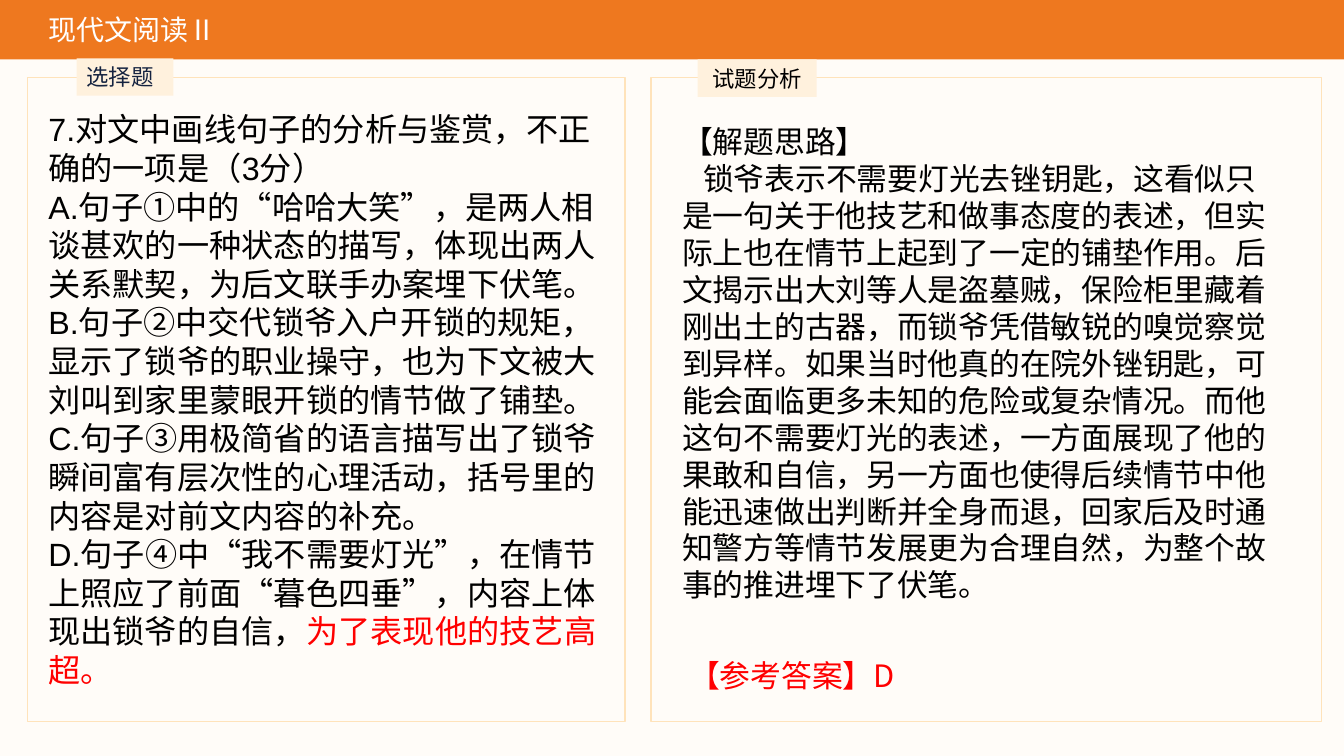
import pptx
import pptx.dml.color
import pptx.enum.shapes
import pptx.enum.text
import pptx.oxml
import pptx.oxml.ns
import pptx.util
from dataclasses import dataclass

Cm = pptx.util.Cm
ALIGN = pptx.enum.text.PP_ALIGN
ANCHOR = pptx.enum.text.MSO_ANCHOR


@dataclass(frozen=True)
class Theme:
    paper: str = "FFFCF8"
    bar: str = "EE781F"
    tag: str = "FFF1DD"
    frame: str = "FFE3BB"
    navy: str = "152340"
    ink: str = "000000"
    white: str = "FFFFFF"
    answer: str = "FF0000"
    latin: str = "Arial"
    chinese: str = "Noto Sans CJK SC"
    tag_size: int = 16
    title_size: int = 20
    analysis_size: int = 22
    question_size: int = 23


class ReadingSlide:
    """Draws the bar, frames, tags and texts of one exam-review slide."""

    def __init__(self, deck, theme):
        self.theme = theme
        self.page = deck.slides.add_slide(deck.slide_layouts[6])
        self.paint(self.page.background.fill, theme.paper)

    def paint(self, fill, color):
        fill.solid()
        fill.fore_color.rgb = pptx.dml.color.RGBColor.from_string(color)

    def rectangle(self, place, fill=None, line=None):
        kind = pptx.enum.shapes.MSO_SHAPE.RECTANGLE
        box = self.page.shapes.add_shape(kind, *map(Cm, place))
        box.shadow.inherit = False
        if fill:
            self.paint(box.fill, fill)
        else:
            box.fill.background()
        if line:
            self.paint(box.line.fill, line)
            box.line.width = pptx.util.Pt(1)
        else:
            box.line.fill.background()
        return box

    def fill_text(self, box, paragraphs, size, anchor=ANCHOR.TOP, align=ALIGN.LEFT, indents=()):
        frame = box.text_frame
        layout = {
            "word_wrap": True,
            "auto_size": pptx.enum.text.MSO_AUTO_SIZE.NONE,
            "vertical_anchor": anchor,
        }
        for name, value in layout.items():
            setattr(frame, name, value)
        for index, spans in enumerate(paragraphs):
            para = frame.paragraphs[0] if index == 0 else frame.add_paragraph()
            para.alignment = align
            if index < len(indents):
                para._p.get_or_add_pPr().set("indent", str(Cm(indents[index])))
            for words, font, color in spans:
                self.span(para, words, size, font, color)

    def span(self, para, words, size, font, color):
        span = para.add_run()
        span.text = words
        for name, value in {"size": pptx.util.Pt(size), "name": font}.items():
            setattr(span.font, name, value)
        span.font.color.rgb = pptx.dml.color.RGBColor.from_string(color)
        east = pptx.oxml.parse_xml(
            f'<a:ea {pptx.oxml.ns.nsdecls("a")} typeface="{self.theme.chinese}"/>'
        )
        span.font._element.find(pptx.oxml.ns.qn("a:latin")).addnext(east)

    def tag(self, place, words, font, color, align):
        box = self.rectangle(place, fill=self.theme.tag)
        self.fill_text(box, [[(words, font, color)]], self.theme.tag_size, ANCHOR.MIDDLE, align)

    def text(self, place, paragraphs, size, indents=()):
        box = self.page.shapes.add_textbox(*map(Cm, place))
        self.fill_text(box, paragraphs, size, indents=indents)


QUESTION = [
    "7.对文中画线句子的分析与鉴赏，不正确的一项是（3分）",
    "A.句子①中的“哈哈大笑”，是两人相谈甚欢的一种状态的描写，体现出两人关系默契，为后文联手办案埋下伏笔。",
    "B.句子②中交代锁爷入户开锁的规矩，显示了锁爷的职业操守，也为下文被大刘叫到家里蒙眼开锁的情节做了铺垫。",
    "C.句子③用极简省的语言描写出了锁爷瞬间富有层次性的心理活动，括号里的内容是对前文内容的补充。",
    "D.句子④中“我不需要灯光”，在情节上照应了前面“暮色四垂”，内容上体现出锁爷的自信，",
]
WRONG_CLAIM = "为了表现他的技艺高超。"
ANALYSIS = (
    "锁爷表示不需要灯光去锉钥匙，这看似只是一句关于他技艺和做事态度的表述，"
    "但实际上也在情节上起到了一定的铺垫作用。后文揭示出大刘等人是盗墓贼，"
    "保险柜里藏着刚出土的古器，而锁爷凭借敏锐的嗅觉察觉到异样。"
    "如果当时他真的在院外锉钥匙，可能会面临更多未知的危险或复杂情况。"
    "而他这句不需要灯光的表述，一方面展现了他的果敢和自信，"
    "另一方面也使得后续情节中他能迅速做出判断并全身而退，"
    "回家后及时通知警方等情节发展更为合理自然，为整个故事的推进埋下了伏笔。"
)


def main():
    theme = Theme()
    deck = pptx.Presentation()
    deck.slide_width, deck.slide_height = Cm(33.87), Cm(19.05)
    slide = ReadingSlide(deck, theme)

    slide.rectangle((0, 0, 33.87, 1.5), fill=theme.bar)
    for left, width in ((0.69, 15.06), (16.41, 16.89)):
        slide.rectangle((left, 1.96, width, 16.23), line=theme.frame)
    slide.tag((1.93, 1.47, 2.44, 0.94), "选择题", theme.chinese, theme.navy, ALIGN.LEFT)
    slide.tag((17.58, 1.5, 3, 0.94), "试题分析", theme.latin, theme.ink, ALIGN.CENTER)

    title = [("现代文阅读Ⅱ", theme.chinese, theme.white)]
    slide.text((0.97, 0.18, 5.94, 1.12), [title], theme.title_size)

    question = [[(words, theme.latin, theme.ink)] for words in QUESTION]
    question[-1].append((WRONG_CLAIM, theme.latin, theme.answer))
    slide.text((0.97, 2.64, 14.53, 15.01), question, theme.question_size)

    analysis = [
        [("【解题思路】", theme.latin, theme.ink)],
        [(ANALYSIS, theme.chinese, theme.ink)],
    ]
    slide.text((16.94, 2.97, 15.7, 12.62), analysis, theme.analysis_size, indents=(0, 0.53))

    answer = [("【参考答案】", theme.latin, theme.answer), ("D", theme.chinese, theme.answer)]
    slide.text((17.12, 16.43, 14.12, 1.19), [answer], theme.analysis_size)

    deck.save("out.pptx")


if __name__ == "__main__":
    main()
